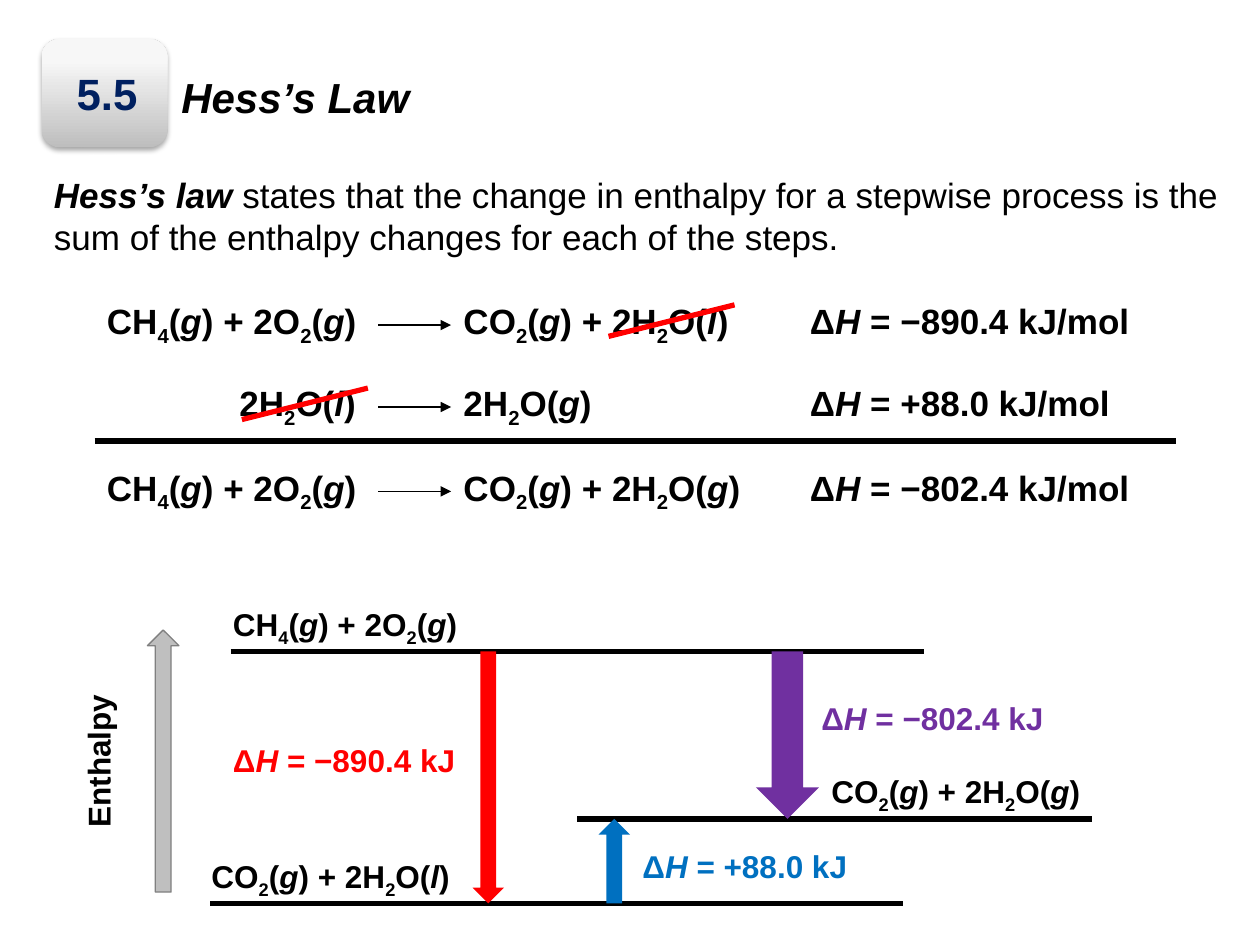
from lxml.etree import SubElement
from pptx import Presentation
from pptx.dml.color import RGBColor
from pptx.enum.shapes import MSO_CONNECTOR, MSO_SHAPE
from pptx.enum.text import MSO_ANCHOR, PP_ALIGN
from pptx.oxml import parse_xml
from pptx.oxml.ns import nsdecls, qn
from pptx.util import Inches, Pt

BLACK, RED, BLUE, PURPLE = "000000", "FF0000", "0070C0", "7030A0"
color = RGBColor.from_string

presentation = Presentation()
presentation.slide_width, presentation.slide_height = Inches(10), Inches(7.5)
slide = presentation.slides.add_slide(presentation.slide_layouts[6])


def add_text(text, left, top, width, height, size=18, font_color=BLACK,
             bold=True, align=PP_ALIGN.LEFT):
    """Add a text box; *x* marks italics and _x_ a subscript."""
    box = slide.shapes.add_textbox(Inches(left), Inches(top), Inches(width), Inches(height))
    box.text_frame.word_wrap = True
    paragraph = box.text_frame.paragraphs[0]
    paragraph.alignment = align
    font = paragraph.font
    font.name, font.size, font.bold = "Arial", Pt(size), bold
    font.color.rgb = color(font_color)
    for i, part in enumerate(text.split("*")):
        for j, piece in enumerate(part.split("_")):
            if piece:
                run = paragraph.add_run()
                run.text = piece
                if i % 2:
                    run.font.italic = run.font.bold = True
                if j % 2:
                    run.font._element.set("baseline", "-25000")
    return box


def add_line(x1, y1, x2, y2, line_color=BLACK, width=3, arrow=False):
    line = slide.shapes.add_connector(
        MSO_CONNECTOR.STRAIGHT, Inches(x1), Inches(y1), Inches(x2), Inches(y2))
    line.line.color.rgb = color(line_color)
    line.line.width = Pt(width)
    properties = line._element.spPr
    if arrow:
        SubElement(properties.find(qn("a:ln")), qn("a:tailEnd"), type="triangle")
    SubElement(properties, qn("a:effectLst"))


# Title and definition
title = add_text("*Hess’s Law*", 1.34, 0.02, 8.49, 1.56, 24)
title.text_frame.vertical_anchor = MSO_ANCHOR.MIDDLE
title.text_frame.paragraphs[0].line_spacing = 0.81
add_text("*Hess’s law* states that the change in enthalpy for a stepwise process is the "
         "sum of the enthalpy changes for each of the steps.",
         0.33, 1.33, 9.5, 5.49, 20, bold=False)

# Thermochemical equations
METHANE = "CH_4_(*g*) + 2O_2_(*g*)"
LIQUID_PRODUCTS = "CO_2_(*g*) + 2H_2_O(*l*)"
GAS_PRODUCTS = "CO_2_(*g*) + 2H_2_O(*g*)"
equations = [
    (2.33, METHANE, LIQUID_PRODUCTS, "−890.4", PP_ALIGN.LEFT),
    (2.98, "2H_2_O(*l*) ", "2H_2_O(*g*)", "+88.0", PP_ALIGN.RIGHT),
    (3.65, METHANE, GAS_PRODUCTS, "−802.4", PP_ALIGN.LEFT),
]
for top, reactants, products, enthalpy, align in equations:
    left = 0.75 if align == PP_ALIGN.LEFT else 1.67
    width = 2.33 if align == PP_ALIGN.LEFT else 1.33
    add_text(reactants, left, top, width, 0.44, 20, align=align)
    add_text(products, 3.58, top, 2.58, 0.44, 20)
    add_text(f"Δ*H* = {enthalpy} kJ/mol", 6.33, top, 2.92, 0.44, 20)
    add_line(3, top + 0.25, 3.58, top + 0.25, width=0.75, arrow=True)
add_line(0.75, 3.5, 9.33, 3.5)
for left, bottom in [(1.92, 3.33), (4.83, 2.67)]:
    add_line(left, bottom, left + 1, bottom - 0.25, RED)

# Enthalpy diagram: levels, labels and arrows
levels = [
    (1.83, 7.33, 5.17, METHANE, 1.75),
    (4.58, 8.67, 6.5, GAS_PRODUCTS, 6.5),
    (1.67, 7.17, 7.17, LIQUID_PRODUCTS, 1.58),
]
for start, end, y, species, label_left in levels:
    add_line(start, y, end, y)
    add_text(species, label_left, y - 0.42, 2.58, 0.4)

for enthalpy, left, top, label_color in [
        ("−890.4", 1.75, 5.83, RED), ("+88.0", 5, 6.67, BLUE), ("−802.4", 6.42, 5.5, PURPLE)]:
    add_text(f"Δ*H* = {enthalpy} kJ", left, top, 2.92, 0.4, font_color=label_color)

axis_label = add_text("Enthalpy", 0.58, 5.33, 0.5, 1.42, align=PP_ALIGN.CENTER)
axis_label.text_frame._txBody.bodyPr.set("vert", "vert270")

for kind, left, top, width, height, fill, outline in [
        (MSO_SHAPE.UP_ARROW, 1.17, 5, 0.25, 2.08, "BFBFBF", "808080"),
        (MSO_SHAPE.DOWN_ARROW, 3.75, 5.17, 0.25, 2, RED, None),
        (MSO_SHAPE.UP_ARROW, 4.75, 6.5, 0.25, 0.67, BLUE, None),
        (MSO_SHAPE.DOWN_ARROW, 6, 5.17, 0.5, 1.33, PURPLE, None)]:
    arrow = slide.shapes.add_shape(kind, Inches(left), Inches(top), Inches(width), Inches(height))
    arrow.shadow.inherit = False
    arrow.fill.solid()
    arrow.fill.fore_color.rgb = color(fill)
    if outline:
        arrow.line.color.rgb = color(outline)
        arrow.line.width = Pt(0.75)
    else:
        arrow.line.fill.background()

# Section number badge
badge = slide.shapes.add_shape(
    MSO_SHAPE.ROUNDED_RECTANGLE, Inches(0.33), Inches(0.31), Inches(1), Inches(0.86))
badge.line.fill.background()
stops = "".join(f'<a:gs pos="{position}000"><a:srgbClr val="{value}"/></a:gs>'
                for position, value in [(0, "BEBEBE"), (80, "F7F7F7"), (100, "F8F8F8")])
gradient = parse_xml(f'<a:gradFill {nsdecls("a")}><a:gsLst>{stops}</a:gsLst>'
                     '<a:lin ang="16200000" scaled="0"/></a:gradFill>')
badge._element.spPr.find(qn("a:prstGeom")).addnext(gradient)
badge._element.spPr.append(parse_xml(
    f'<a:effectLst {nsdecls("a")}><a:outerShdw blurRad="{Pt(3.1)}" dist="{Pt(1.8)}" '
    'dir="5400000" rotWithShape="0"><a:srgbClr val="000000"><a:alpha val="35000"/>'
    '</a:srgbClr></a:outerShdw></a:effectLst>'))
number = add_text("5.5", 0.45, 0.48, 0.8, 0.52, 25, "002060", align=PP_ALIGN.CENTER)
number.text_frame.paragraphs[0].space_before = Pt(10)

presentation.save("out.pptx")
